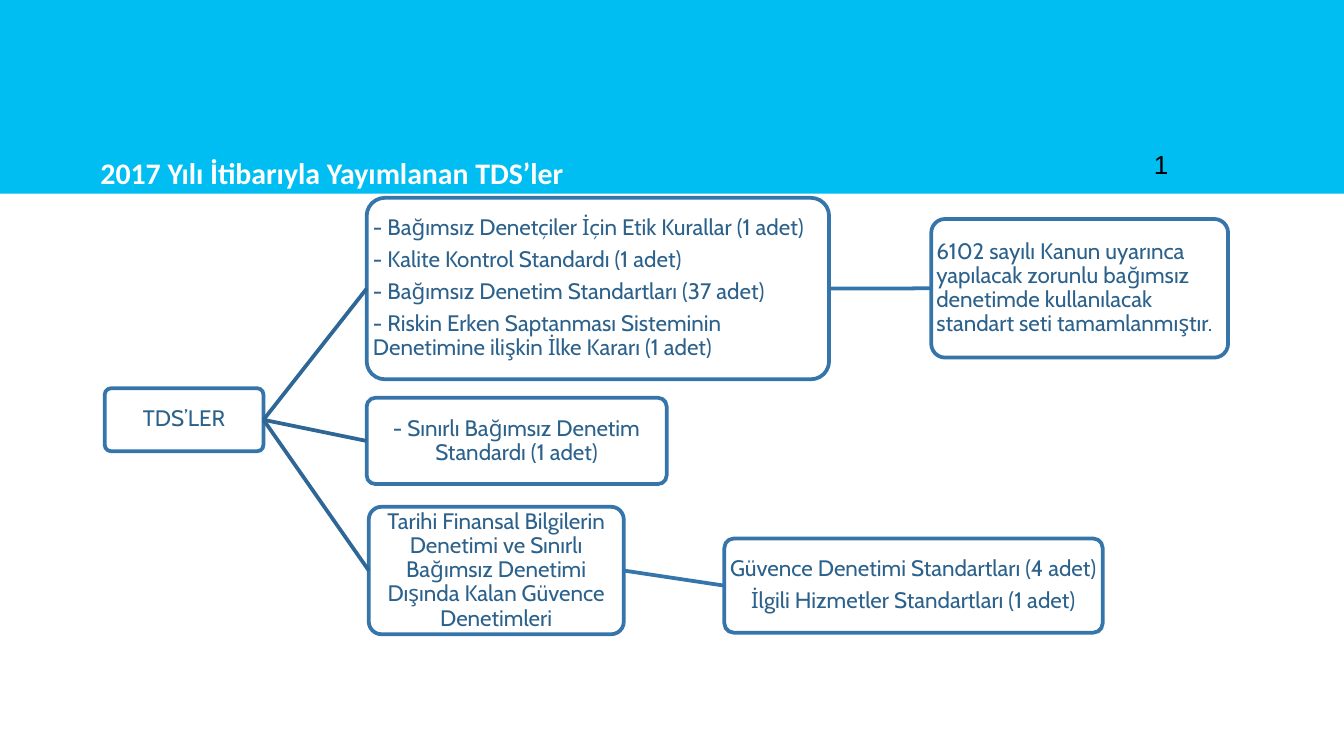
from dataclasses import dataclass

from lxml import etree
from pptx import Presentation
from pptx.dml.color import RGBColor
from pptx.enum import shapes, text
from pptx.oxml import ns
from pptx.util import Cm, Pt

LEFT, CENTER = text.PP_ALIGN.LEFT, text.PP_ALIGN.CENTER


@dataclass(frozen=True)
class Theme:
    band: str = "00BEF2"
    paper: str = "FFFFFF"
    outline: str = "3575A9"
    branch: str = "2E6795"
    body: str = "2B618B"
    number: str = "000000"
    body_font: str = "Cabin"
    title_font: str = "Calibri"
    number_font: str = "Arial"
    body_size: int = 12
    title_size: int = 16
    number_size: int = 14
    line_width: int = 2


THEME = Theme()
SLIDE_SIZE = (25.4, 14.29)
BAND_HEIGHT = 3.66

TITLE = "2017 Yılı İtibarıyla Yayımlanan TDS’ler"
PAGE_NUMBER = "1"

NODES = {
    "root": ((1.98, 7.34, 3, 1.19), CENTER, ["TDS’LER"]),
    "audit": ((6.93, 3.74, 8.74, 3.43), LEFT, [
        "- Bağımsız Denetçiler İçin Etik Kurallar (1 adet)",
        "- Kalite Kontrol Standardı (1 adet)",
        "- Bağımsız Denetim Standartları (37 adet)",
        "- Riskin Erken Saptanması Sisteminin Denetimine ilişkin İlke Kararı (1 adet)",
    ]),
    "law": ((17.6, 4.14, 5.61, 2.62), LEFT, [
        "6102 sayılı Kanun uyarınca yapılacak zorunlu bağımsız denetimde "
        "kullanılacak standart seti tamamlanmıştır.",
    ]),
    "review": ((6.93, 7.52, 5.67, 1.63), CENTER, [
        "- Sınırlı Bağımsız Denetim Standardı (1 adet)",
    ]),
    "assurance": ((6.97, 9.58, 4.82, 2.41), CENTER, [
        "Tarihi Finansal Bilgilerin Denetimi ve Sınırlı Bağımsız Denetimi "
        "Dışında Kalan Güvence Denetimleri",
    ]),
    "services": ((13.69, 10.18, 7.15, 1.78), CENTER, [
        "Güvence Denetimi Standartları (4 adet)",
        "İlgili Hizmetler Standartları (1 adet)",
    ]),
}

LINKS = [
    ("root", "audit", THEME.branch),
    ("root", "review", THEME.branch),
    ("root", "assurance", THEME.branch),
    ("audit", "law", THEME.outline),
    ("assurance", "services", THEME.outline),
]


def color(value):
    return RGBColor.from_string(value)


def set_insets(frame, inset):
    frame.margin_left = frame.margin_right = Cm(inset)
    frame.margin_top = frame.margin_bottom = Cm(inset)


def add_run(paragraph, words, font, size, ink, bold=False):
    run = paragraph.add_run()
    run.text = words
    run.font.name = font
    run.font.size = Pt(size)
    run.font.bold = bold
    run.font.color.rgb = color(ink)


def add_panel(slide, kind, place, fill):
    panel = slide.shapes.add_shape(kind, *map(Cm, place))
    panel.shadow.inherit = False
    panel.fill.solid()
    panel.fill.fore_color.rgb = color(fill)
    panel.line.fill.background()
    return panel


def add_node(slide, place, align, lines):
    node = add_panel(slide, shapes.MSO_SHAPE.ROUNDED_RECTANGLE, place, THEME.paper)
    node.adjustments[0] = 0.1
    node.line.color.rgb = color(THEME.outline)
    node.line.width = Pt(THEME.line_width)
    frame = node.text_frame
    frame.word_wrap = True
    frame.vertical_anchor = text.MSO_ANCHOR.MIDDLE
    set_insets(frame, 0.02)
    for index, line in enumerate(lines):
        paragraph = frame.add_paragraph() if index else frame.paragraphs[0]
        paragraph.alignment = align
        paragraph.line_spacing = 0.9
        paragraph.space_after = Pt(0.35 * THEME.body_size)
        add_run(paragraph, line, THEME.body_font, THEME.body_size, THEME.body)
    return node


def add_link(slide, parent, child, ink):
    link = slide.shapes.add_connector(shapes.MSO_CONNECTOR.STRAIGHT, 0, 0, 0, 0)
    link.begin_connect(parent, 3)
    link.end_connect(child, 1)
    link.line.color.rgb = color(ink)
    link.line.width = Pt(THEME.line_width)
    etree.SubElement(link._element.spPr, ns.qn("a:effectLst"))


def add_label(slide, place, words, font, size, ink, bold=False):
    frame = slide.shapes.add_textbox(*map(Cm, place)).text_frame
    add_run(frame.paragraphs[0], words, font, size, ink, bold)
    return frame


def main():
    deck = Presentation()
    deck.slide_width, deck.slide_height = map(Cm, SLIDE_SIZE)
    slide = deck.slides.add_slide(deck.slide_layouts[6])

    band = (0, 0, SLIDE_SIZE[0], BAND_HEIGHT)
    add_panel(slide, shapes.MSO_SHAPE.RECTANGLE, band, THEME.band)

    nodes = {key: add_node(slide, *node) for key, node in NODES.items()}
    for parent, child, ink in LINKS:
        add_link(slide, nodes[parent], nodes[child], ink)

    number = add_label(slide, (21.56, 1.8, 1.52, 1.85), PAGE_NUMBER,
                       THEME.number_font, THEME.number_size, THEME.number)
    number.word_wrap = True
    number.vertical_anchor = text.MSO_ANCHOR.BOTTOM
    set_insets(number, 0.25)

    title = add_label(slide, (1.65, 2.79, 9.45, 0.94), TITLE,
                      THEME.title_font, THEME.title_size, THEME.paper, True)
    title.word_wrap = False
    title.auto_size = text.MSO_AUTO_SIZE.SHAPE_TO_FIT_TEXT

    deck.save("out.pptx")


if __name__ == "__main__":
    main()
